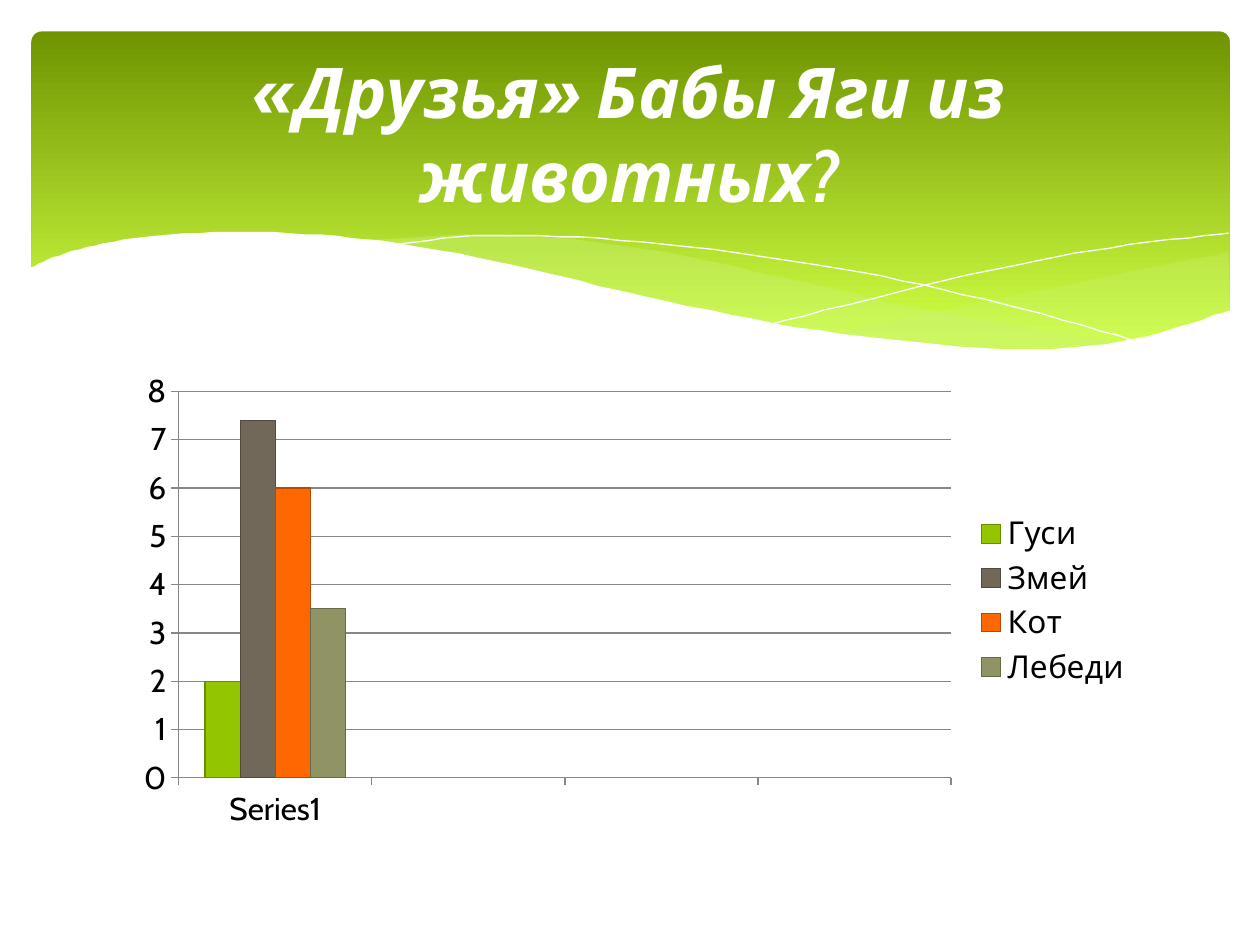
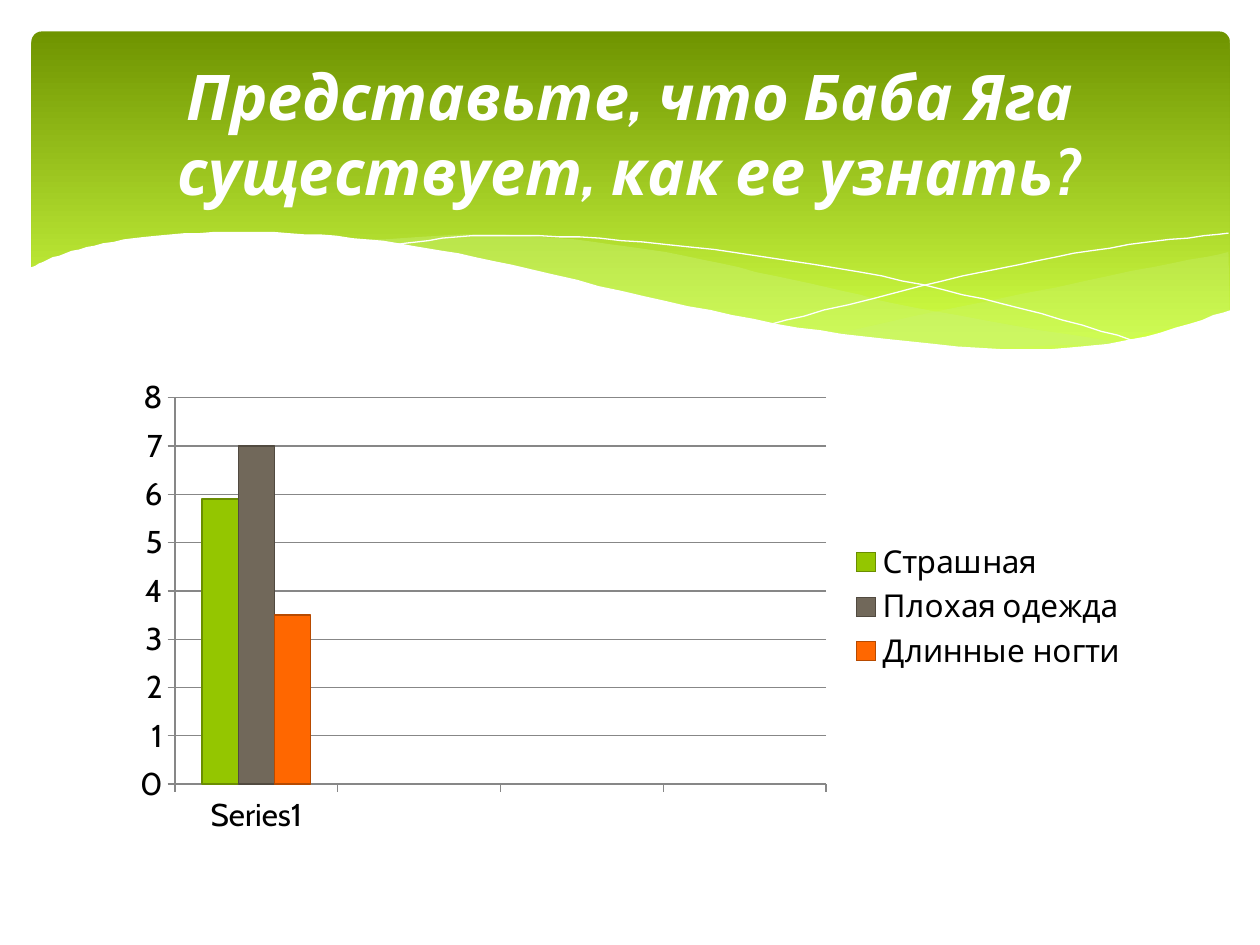
"""Build two survey slides with column charts under a shared green wave header."""
from dataclasses import dataclass
from typing import Any, NamedTuple

from lxml.etree import SubElement
from pptx import Presentation
from pptx.chart.data import CategoryChartData
from pptx.dml.color import RGBColor
from pptx.enum.chart import XL_CHART_TYPE, XL_LEGEND_POSITION, XL_TICK_MARK
from pptx.enum.shapes import MSO_SHAPE
from pptx.enum.text import MSO_ANCHOR, PP_ALIGN
from pptx.oxml.ns import qn
from pptx.util import Pt

PX = 9144
CURVE_STEPS = 8
FONT = "Cabin"
WHITE, BLACK, GRAY = "FFFFFF", "000000", "878787"
BAND_TOP, BAND_BOTTOM, MIST = "6F9400", "D0FF44", "CAF278"
SERIES_COLORS = ["94C600", "71685A", "FF6700", "909465"]
CATEGORIES = ["Series1", "", "", ""]
TITLE_FORMAT = {"name": FONT, "bold": True, "italic": True}
CHART_FORMAT = {"name": FONT, "size": Pt(18)}
AXIS_FORMAT = {"major_tick_mark": XL_TICK_MARK.OUTSIDE, "minor_tick_mark": XL_TICK_MARK.NONE}
SCALE_FORMAT = {"minimum_scale": 0, "maximum_scale": 8, "major_unit": 1, "has_major_gridlines": True}
PLOT_FORMAT = {"gap_width": 150, "overlap": 0, "vary_by_categories": False}

Points = list[tuple[float, float]]


class Box(NamedTuple):
    """A rectangle in px."""

    left: int
    top: int
    width: int
    height: int

    def emu(self) -> list[int]:
        """Return the four lengths in EMU."""
        return [value * PX for value in self]


@dataclass(frozen=True)
class Wave:
    """Joined smooth edges of the header: an area if filled, else a thin line."""

    edges: list[Points]
    fill: str = ""
    opacity: int = 100


@dataclass(frozen=True)
class Survey:
    """A question with the score of each answer."""

    title: str
    title_size: int
    chart_box: Box
    answers: dict[str, float]


BAND_BOX = Box(25, 25, 951, 270)
TITLE_BOX = Box(50, 37, 900, 137)

WAVES = [
    Wave([[(975, 200), (861, 223), (661, 265)],
          [(661, 265), (769, 277), (863, 275), (976, 247)]], MIST, 29),
    Wave([[(893, 273), (741, 247), (629, 222), (514, 198), (399, 186), (286, 191)],
          [(286, 191), (404, 211), (566, 248), (722, 274), (893, 273)]], MIST, 40),
    Wave([[(309, 195), (387, 187), (510, 192), (665, 213), (795, 241), (907, 272)]]),
    Wave([[(613, 257), (748, 223), (866, 199), (975, 185)]]),
    Wave([[(977, 246), (899, 269), (809, 277), (668, 265), (529, 239), (391, 207),
           (292, 190), (193, 184), (106, 189), (52, 201), (23, 213)],
          [(23, 329), (977, 329)]], WHITE),
]

SURVEYS = [
    Survey("«Друзья» Бабы Яги из животных?", 40, Box(98, 288, 810, 377),
           {"Гуси": 2, "Змей": 7.4, "Кот": 6, "Лебеди": 3.5}),
    Survey("Представьте, что Баба Яга существует, как ее узнать?", 36, Box(95, 293, 810, 377),
           {"Страшная": 5.9, "Плохая одежда": 7, "Длинные ногти": 3.5}),
]


def color(code: str, shade: float = 1) -> RGBColor:
    """Turn a hex string into a colour, darkened by the shade factor."""
    return RGBColor(*(int(channel * shade) for channel in bytes.fromhex(code)))


def apply_format(target: Any, values: dict[str, Any]) -> None:
    """Set each named attribute on the target."""
    for name, value in values.items():
        setattr(target, name, value)


def paint(part: Any, code: str) -> None:
    """Give a fill or line one solid colour."""
    part.solid()
    part.fore_color.rgb = color(code)


def blend(before: float, start: float, end: float, after: float, t: float) -> float:
    """Return a Catmull-Rom value between start and end."""
    pull_in, pull_out = (end - before) / 2, (after - start) / 2
    bend = 3 * (end - start) - 2 * pull_in - pull_out
    twist = 2 * (start - end) + pull_in + pull_out
    return start + t * (pull_in + t * (bend + t * twist))


def smooth(knots: Points) -> Points:
    """Return points on a smooth curve through the knots."""
    padded = [knots[0], *knots, knots[-1]]
    curve = [knots[0]]
    for group in zip(padded, padded[1:], padded[2:], padded[3:]):
        for step in range(1, CURVE_STEPS + 1):
            x, y = (blend(*values, step / CURVE_STEPS) for values in zip(*group))
            curve.append((x, y))
    return curve


def draw_band(page: Any) -> None:
    """Draw the gradient header band."""
    band = page.shapes.add_shape(MSO_SHAPE.ROUNDED_RECTANGLE, *BAND_BOX.emu())
    band.adjustments[0] = 0.03
    band.shadow.inherit = False
    band.line.fill.background()
    band.fill.gradient()
    band.fill.gradient_angle = 270
    stops = [(0, BAND_TOP), (0.9, BAND_BOTTOM)]
    for stop, (position, code) in zip(band.fill.gradient_stops, stops):
        stop.position = position
        stop.color.rgb = color(code)


def draw_wave(page: Any, wave: Wave) -> None:
    """Draw one curved area or line of the header."""
    points = [point for edge in wave.edges for point in smooth(edge)]
    builder = page.shapes.build_freeform(*points[0], scale=PX)
    builder.add_line_segments(points[1:], close=bool(wave.fill))
    shape = builder.convert_to_shape()
    shape.shadow.inherit = False
    if not wave.fill:
        shape.fill.background()
        paint(shape.line.fill, WHITE)
        shape.line.width = 0
        return
    paint(shape.fill, wave.fill)
    shape.line.fill.background()
    if wave.opacity < 100:
        tint = next(shape.element.spPr.iter(qn("a:srgbClr")))
        SubElement(tint, qn("a:alpha"), val=str(wave.opacity * 1000))


def draw_title(page: Any, survey: Survey) -> None:
    """Write the question in the header."""
    frame = page.shapes.add_textbox(*TITLE_BOX.emu()).text_frame
    apply_format(frame, {"word_wrap": True, "vertical_anchor": MSO_ANCHOR.MIDDLE})
    para = frame.paragraphs[0]
    para.alignment = PP_ALIGN.CENTER
    span = para.add_run()
    span.text = survey.title
    apply_format(span.font, TITLE_FORMAT | {"size": Pt(survey.title_size)})
    span.font.color.rgb = color(WHITE)


def draw_chart(page: Any, survey: Survey) -> None:
    """Draw the answers as clustered columns."""
    data = CategoryChartData()
    data.categories = CATEGORIES
    for answer, score in survey.answers.items():
        data.add_series(answer, [score, None, None, None])
    frame = page.shapes.add_chart(XL_CHART_TYPE.COLUMN_CLUSTERED, *survey.chart_box.emu(), data)
    chart = frame.chart
    apply_format(chart, {"has_title": False, "has_legend": True})
    apply_format(chart.legend, {"position": XL_LEGEND_POSITION.RIGHT, "include_in_layout": False})
    apply_format(chart.font, CHART_FORMAT)
    chart.font.color.rgb = color(BLACK)
    apply_format(chart.value_axis, SCALE_FORMAT)
    for axis in (chart.category_axis, chart.value_axis):
        apply_format(axis, AXIS_FORMAT)
    for part in (chart.category_axis, chart.value_axis, chart.value_axis.major_gridlines):
        paint(part.format.line.fill, GRAY)
        part.format.line.width = Pt(0.75)
    plot = chart.plots[0]
    apply_format(plot, PLOT_FORMAT)
    for series, code in zip(plot.series, SERIES_COLORS):
        paint(series.format.fill, code)
        series.format.line.color.rgb = color(code, 0.72)
        series.format.line.width = Pt(0.75)


def main() -> None:
    """Build the deck and save it."""
    deck = Presentation()
    apply_format(deck, {"slide_width": 1000 * PX, "slide_height": 750 * PX})
    for survey in SURVEYS:
        page = deck.slides.add_slide(deck.slide_layouts[6])
        paint(page.background.fill, WHITE)
        draw_band(page)
        for wave in WAVES:
            draw_wave(page, wave)
        draw_chart(page, survey)
        draw_title(page, survey)
    deck.save("out.pptx")


if __name__ == "__main__":
    main()
